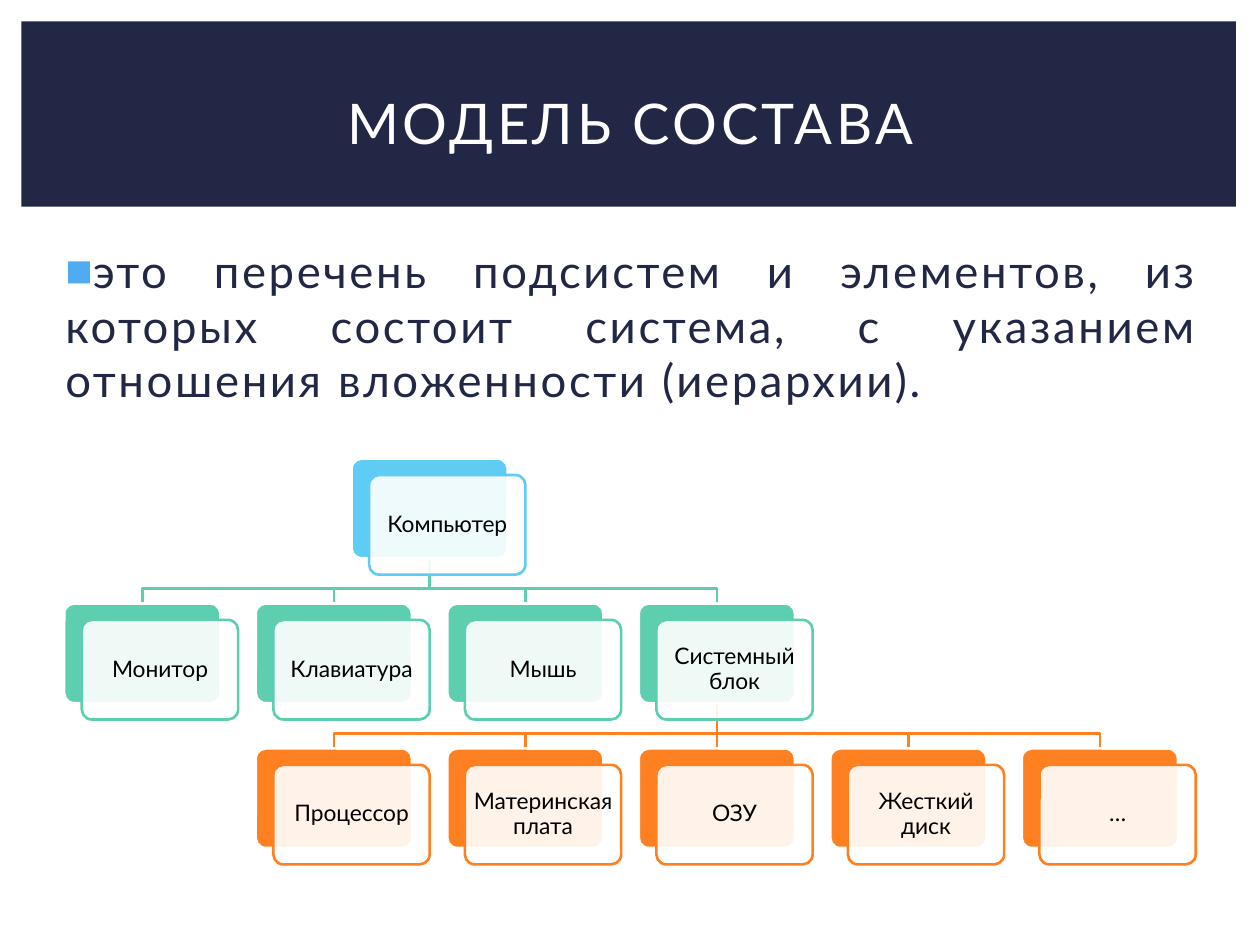
from lxml import etree
from pptx import Presentation
from pptx.dml.color import RGBColor
from pptx.enum import shapes, text
from pptx.oxml import ns
from pptx.util import Inches, Pt

FONT = "Lato"
NAVY, WHITE, BLACK, BULLET = "212745", "FFFFFF", "000000", "4FACF3"
SKY, GREEN, ORANGE = "5ECCF3", "5DCEAF", "FF8021"
COLUMN_STEP, ROW_STEP = Inches(1.52), Inches(1.15)
CARD_WIDTH, CARD_HEIGHT = Inches(1.24), Inches(0.79)
CARD_SHIFT = Inches(0.14)
ELBOW_DROP = Inches(0.24)

LEVELS = [
    (SKY, 1.5, ["Компьютер"], None),
    (GREEN, 0, ["Монитор", "Клавиатура", "Мышь", "Системный блок"], 1.5),
    (ORANGE, 1, ["Процессор", "Материнская плата", "ОЗУ", "Жесткий диск", "…"], 3),
]


def rgb(color):
    return RGBColor.from_string(color)


def add_child(parent, tag, **attributes):
    return etree.SubElement(parent, ns.qn(tag), attributes)


def write(paragraph, words, size, color, spacing=0):
    run = paragraph.add_run()
    run.text = words
    run.font.name = FONT
    run.font.size = Pt(size)
    run.font.color.rgb = rgb(color)
    if spacing:
        run._r.get_or_add_rPr().set("spc", str(int(spacing * 100)))


def add_header(slide, left, top, width, height):
    band = slide.shapes.add_shape(shapes.MSO_SHAPE.RECTANGLE, left, top, width, height)
    band.shadow.inherit = False
    band.fill.solid()
    band.fill.fore_color.rgb = rgb(NAVY)
    band.line.fill.background()
    title = slide.shapes.add_textbox(
        left + Inches(0.25), top + Inches(0.22), width - Inches(0.47), Inches(1.15))
    frame = title.text_frame
    frame.word_wrap = True
    frame.vertical_anchor = text.MSO_ANCHOR.MIDDLE
    heading = frame.paragraphs[0]
    heading.alignment = text.PP_ALIGN.CENTER
    write(heading, "МОДЕЛЬ СОСТАВА", 32, WHITE, 2)


def add_definition(slide, left, top, width, height):
    frame = slide.shapes.add_textbox(left, top, width, height).text_frame
    frame.word_wrap = True
    definition = frame.paragraphs[0]
    definition.alignment = text.PP_ALIGN.JUSTIFY
    properties = definition._p.get_or_add_pPr()
    properties.set("marL", "0")
    properties.set("indent", "0")
    add_child(add_child(properties, "a:buClr"), "a:srgbClr", val=BULLET)
    add_child(properties, "a:buFont", typeface="Arial")
    add_child(properties, "a:buChar", char="■")
    write(definition,
          "это перечень подсистем и элементов, из которых состоит система, "
          "с указанием отношения вложенности (иерархии).", 26, NAVY, 1.5)


def add_branch(slide, start_x, start_y, end_x, end_y, color):
    if start_x == end_x:
        branch = slide.shapes.add_connector(
            shapes.MSO_CONNECTOR.STRAIGHT, start_x, start_y, end_x, end_y)
        add_child(branch._element.spPr, "a:effectLst")
    else:
        bend_y = start_y + ELBOW_DROP
        builder = slide.shapes.build_freeform(start_x, start_y)
        builder.add_line_segments(
            [(start_x, bend_y), (end_x, bend_y), (end_x, end_y)], close=False)
        branch = builder.convert_to_shape()
        branch.shadow.inherit = False
        branch.fill.background()
    branch.line.color.rgb = rgb(color)
    branch.line.width = Pt(1.5)


def add_plate(slide, left, top, fill, outline):
    plate = slide.shapes.add_shape(
        shapes.MSO_SHAPE.ROUNDED_RECTANGLE, left, top, CARD_WIDTH, CARD_HEIGHT)
    plate.adjustments[0] = 0.1
    plate.shadow.inherit = False
    plate.fill.solid()
    plate.fill.fore_color.rgb = rgb(fill)
    plate.line.color.rgb = rgb(outline)
    plate.line.width = Pt(1.5)
    return plate


def add_card(slide, left, top, label, color):
    add_plate(slide, left, top, color, WHITE)
    front = add_plate(slide, left + CARD_SHIFT, top + Inches(0.13), WHITE, color)
    tint = front._element.spPr.find(ns.qn("a:solidFill"))[0]
    add_child(tint, "a:alpha", val="90000")
    frame = front.text_frame
    frame.word_wrap = True
    frame.vertical_anchor = text.MSO_ANCHOR.MIDDLE
    frame.margin_left = frame.margin_right = Inches(0.02)
    frame.margin_top = frame.margin_bottom = Inches(0.03)
    caption = frame.paragraphs[0]
    caption.alignment = text.PP_ALIGN.CENTER
    caption.line_spacing = 0.9
    write(caption, label, 13, BLACK)


def add_hierarchy(slide, left, top):
    def column_left(column):
        return left + int(COLUMN_STEP * column)

    for row, (color, first, labels, parent) in reversed(list(enumerate(LEVELS))):
        if parent is None:
            continue
        row_top = top + ROW_STEP * row
        parent_bottom = row_top - ROW_STEP + CARD_HEIGHT
        middle = CARD_WIDTH // 2
        for column in range(first, first + len(labels)):
            add_branch(slide, column_left(parent) + middle, parent_bottom,
                       column_left(column) + middle, row_top, color)
    for row, (color, first, labels, _) in enumerate(LEVELS):
        for offset, label in enumerate(labels):
            add_card(slide, column_left(first + offset), top + ROW_STEP * row, label, color)


def main():
    deck = Presentation()
    deck.slide_width, deck.slide_height = Inches(10), Inches(7.5)
    slide = deck.slides.add_slide(deck.slide_layouts[6])
    add_header(slide, Inches(0.17), Inches(0.17), Inches(9.64), Inches(1.47))
    add_definition(slide, Inches(0.42), Inches(1.88), Inches(9.19), Inches(4.82))
    add_hierarchy(slide, Inches(0.51), Inches(3.64))
    deck.save("out.pptx")


if __name__ == "__main__":
    main()
